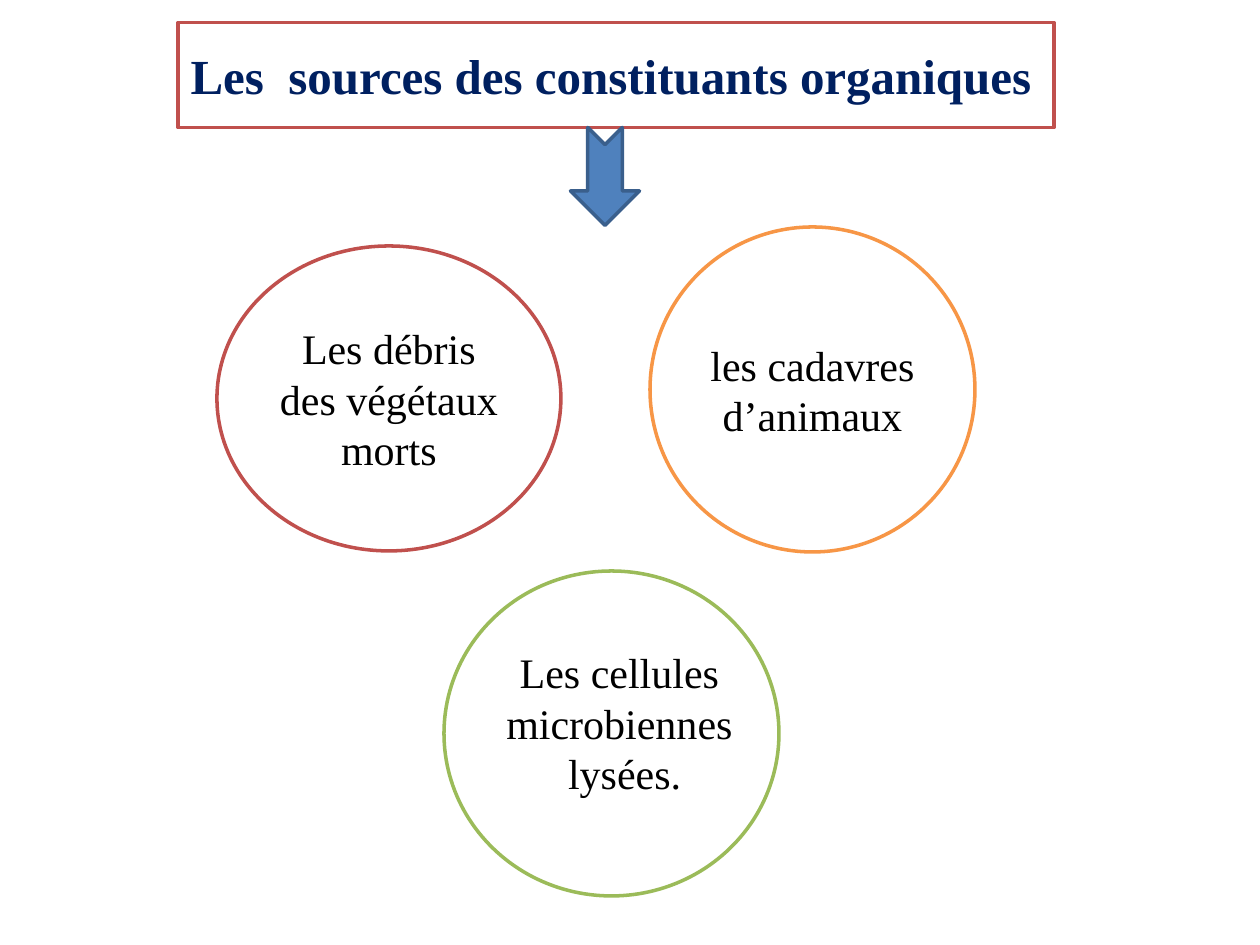
from pptx import Presentation
from pptx.dml.color import RGBColor
from pptx.enum.shapes import MSO_SHAPE as Shape
from pptx.enum.text import MSO_ANCHOR as Anchor, MSO_AUTO_SIZE as AutoSize, PP_ALIGN as Align
from pptx.util import Emu, Pt

PX = 914400 // 126
COLORS = {
    "white": "FFFFFF", "black": "000000", "navy": "002060", "red": "C0504D",
    "orange": "F79646", "green": "9BBB59", "blue": "4F81BD", "dark blue": "3A5F8C",
}
TITLE = "Les  sources des constituants organiques"
TITLE_AREA = (178, 39, 876, 72)
ARROW_AREA = (556, 142, 98, 69)
CIRCLES = [
    ("red", (217, 246, 344, 305), ["Les débris des végétaux morts"]),
    ("orange", (650, 227, 325, 325), ["les cadavres d’animaux"]),
    ("green", (444, 571, 335, 325), []),
]
CELLS_AREA = (462, 640, 315, 165)
CELLS = ["Les cellules microbiennes", " lysées."]
TITLE_FONT = {"name": "Times New Roman", "size": Pt(28), "bold": True}
BODY_FONT = {"name": "Times New Roman", "size": Pt(24), "bold": False}


def color(name):
    return RGBColor.from_string(COLORS[name])


def emu(area):
    return [Emu(length * PX) for length in area]


def paint(shape, fill, line):
    shape.fill.solid()
    shape.fill.fore_color.rgb = color(fill)
    shape.line.color.rgb = color(line)
    shape.line.width = Pt(2)


def write(shape, lines, font, ink, align, wrap=True):
    frame = shape.text_frame
    frame.word_wrap = wrap
    frame.vertical_anchor = Anchor.MIDDLE
    frame.text = "\n".join(lines)
    for para in frame.paragraphs:
        para.alignment = align
        for span in para.runs:
            for key, value in font.items():
                setattr(span.font, key, value)
            span.font.color.rgb = color(ink)


def add_shape(page, kind, area, fill, line):
    shape = page.shapes.add_shape(kind, *emu(area))
    shape.shadow.inherit = False
    paint(shape, fill, line)
    return shape


def main():
    deck = Presentation()
    deck.slide_width, deck.slide_height = emu((1260, 945))
    page = deck.slides.add_slide(deck.slide_layouts[5])

    title = page.shapes.title
    title.left, title.top, title.width, title.height = emu(TITLE_AREA)
    paint(title, "white", "red")
    write(title, [TITLE], TITLE_FONT, "navy", Align.LEFT, wrap=False)
    title.text_frame.auto_size = AutoSize.SHAPE_TO_FIT_TEXT

    for line, area, lines in CIRCLES:
        circle = add_shape(page, Shape.OVAL, area, "white", line)
        if lines:
            write(circle, lines, BODY_FONT, "black", Align.CENTER)

    cells = page.shapes.add_textbox(*emu(CELLS_AREA))
    write(cells, CELLS, BODY_FONT, "black", Align.CENTER)
    cells.text_frame.auto_size = AutoSize.SHAPE_TO_FIT_TEXT

    arrow = add_shape(page, Shape.NOTCHED_RIGHT_ARROW, ARROW_AREA, "blue", "dark blue")
    arrow.rotation = 90

    deck.save("out.pptx")


if __name__ == "__main__":
    main()
